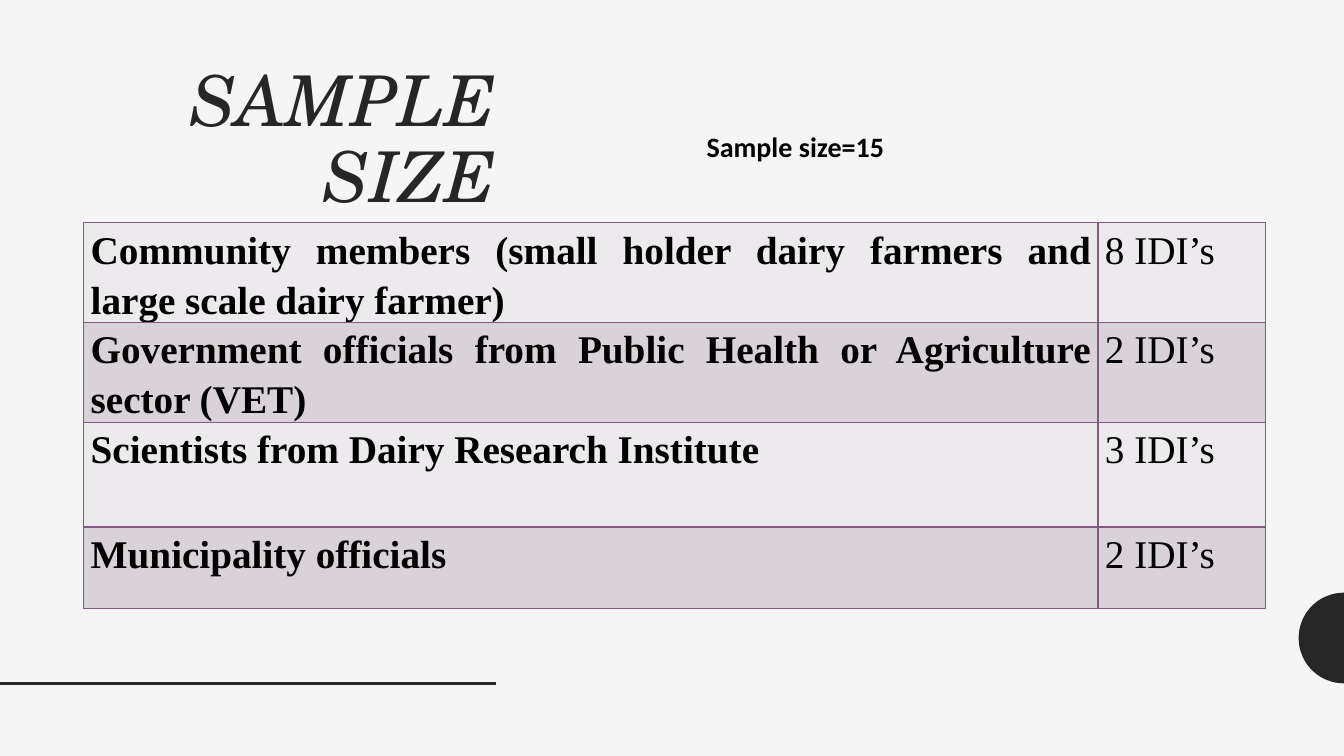
from math import cos, pi, sin

from pptx import Presentation
from pptx.dml.color import RGBColor
from pptx.enum.shapes import MSO_CONNECTOR
from pptx.enum.text import MSO_ANCHOR, MSO_AUTO_SIZE, PP_ALIGN
from pptx.oxml import parse_xml
from pptx.oxml.ns import nsdecls
from pptx.util import Inches, Pt

STRAIGHT = MSO_CONNECTOR.STRAIGHT
TOP = MSO_ANCHOR.TOP
NO_FIT = MSO_AUTO_SIZE.NONE
RIGHT, JUSTIFY = PP_ALIGN.RIGHT, PP_ALIGN.JUSTIFY

PAPER = RGBColor(0xF5, 0xF5, 0xF5)
DARK = RGBColor(0x26, 0x26, 0x26)
BLACK = RGBColor(0, 0, 0)
PURPLE = RGBColor(0x83, 0x5B, 0x82)
BANDS = (RGBColor(0xED, 0xEA, 0xED), RGBColor(0xD9, 0xD2, 0xD8))

WIDTH, HEIGHT = 13.33, 7.5
COLS = (10.06, 1.66)
GROUPS = (
    (0.94, "Community members (small holder dairy farmers and large scale dairy farmer)",
     "8 IDI’s"),
    (0.81, "Government officials from Public Health or Agriculture sector (VET)", "2 IDI’s"),
    (1.04, "Scientists from Dairy Research Institute", "3 IDI’s"),
    (0.81, "Municipality officials", "2 IDI’s"),
)


def style(para, name, size, color, align, bold=False, italic=False):
    para.alignment = align
    font = para.font
    font.name, font.size = name, Pt(size)
    font.bold, font.italic = bold, italic
    font.color.rgb = color


def add_disc(slide, x, y, radius, steps=32):
    """Draw the left half of a disc centred at x, y."""
    points = [(Inches(x - radius * sin(pi * i / steps)),
               Inches(y - radius * cos(pi * i / steps))) for i in range(steps + 1)]
    outline = slide.shapes.build_freeform(*points[0])
    outline.add_line_segments(points[1:], close=True)
    disc = outline.convert_to_shape()
    disc.shadow.inherit = False
    disc.fill.solid()
    disc.fill.fore_color.rgb = DARK
    disc.line.fill.background()


def add_rule(slide, x, y, end):
    rule = slide.shapes.add_connector(STRAIGHT, Inches(x), Inches(y), Inches(end), Inches(y))
    rule.line.color.rgb = DARK
    rule.line.width = Pt(2)
    rule._element.spPr.append(parse_xml(f"<a:effectLst {nsdecls('a')}/>"))


def set_title(slide, text):
    title = slide.shapes.title
    title.left, title.top = Inches(0.83), Inches(0.61)
    title.width, title.height = Inches(4.19), Inches(5.42)
    frame = title.text_frame
    frame.text = text
    frame.word_wrap = True
    frame.auto_size = NO_FIT
    frame.vertical_anchor = TOP
    para = frame.paragraphs[0]
    para.line_spacing = 0.9
    style(para, "TeX Gyre Schola", 50, DARK, RIGHT, italic=True)


def add_note(slide, text):
    box = slide.shapes.add_textbox(Inches(6.91), Inches(1.24), Inches(4.83), Inches(0.77))
    frame = box.text_frame
    frame.word_wrap = True
    frame.text = text
    style(frame.paragraphs[0], "Calibri", 20, BLACK, JUSTIFY, bold=True)


def add_border(cell):
    props = cell._tc.get_or_add_tcPr()
    for side in "LRTB":
        props.append(parse_xml(
            f'<a:ln{side} {nsdecls("a")} w="{Pt(1)}"><a:solidFill>'
            f'<a:srgbClr val="{PURPLE}"/></a:solidFill></a:ln{side}>'))


def fill_cell(cell, text, band, bold):
    add_border(cell)
    cell.fill.solid()
    cell.fill.fore_color.rgb = band
    cell.margin_left = cell.margin_right = Inches(0.07)
    cell.margin_top = cell.margin_bottom = 0
    cell.text = text
    para = cell.text_frame.paragraphs[0]
    para.line_spacing = 1.15
    style(para, "Times New Roman", 28, BLACK, JUSTIFY, bold=bold)


def add_groups(slide):
    frame = slide.shapes.add_table(
        len(GROUPS), len(COLS), Inches(0.83), Inches(2.21),
        Inches(sum(COLS)), Inches(sum(group[0] for group in GROUPS)))
    table = frame.table
    table.first_row = False
    for col, width in zip(table.columns, COLS):
        col.width = Inches(width)
    for r, (height, *texts) in enumerate(GROUPS):
        table.rows[r].height = Inches(height)
        for c, text in enumerate(texts):
            fill_cell(table.cell(r, c), text, BANDS[r % 2], bold=c == 0)


def main():
    deck = Presentation()
    deck.slide_width, deck.slide_height = Inches(WIDTH), Inches(HEIGHT)
    slide = deck.slides.add_slide(deck.slide_layouts[5])
    slide.background.fill.solid()
    slide.background.fill.fore_color.rgb = PAPER

    # Edge decoration
    add_disc(slide, WIDTH, 6.33, 0.45)
    add_rule(slide, 0, 6.78, 4.92)

    # Heading, table and total
    set_title(slide, "SAMPLE SIZE")
    add_groups(slide)
    add_note(slide, "Sample size=15")

    deck.save("out.pptx")


if __name__ == "__main__":
    main()
